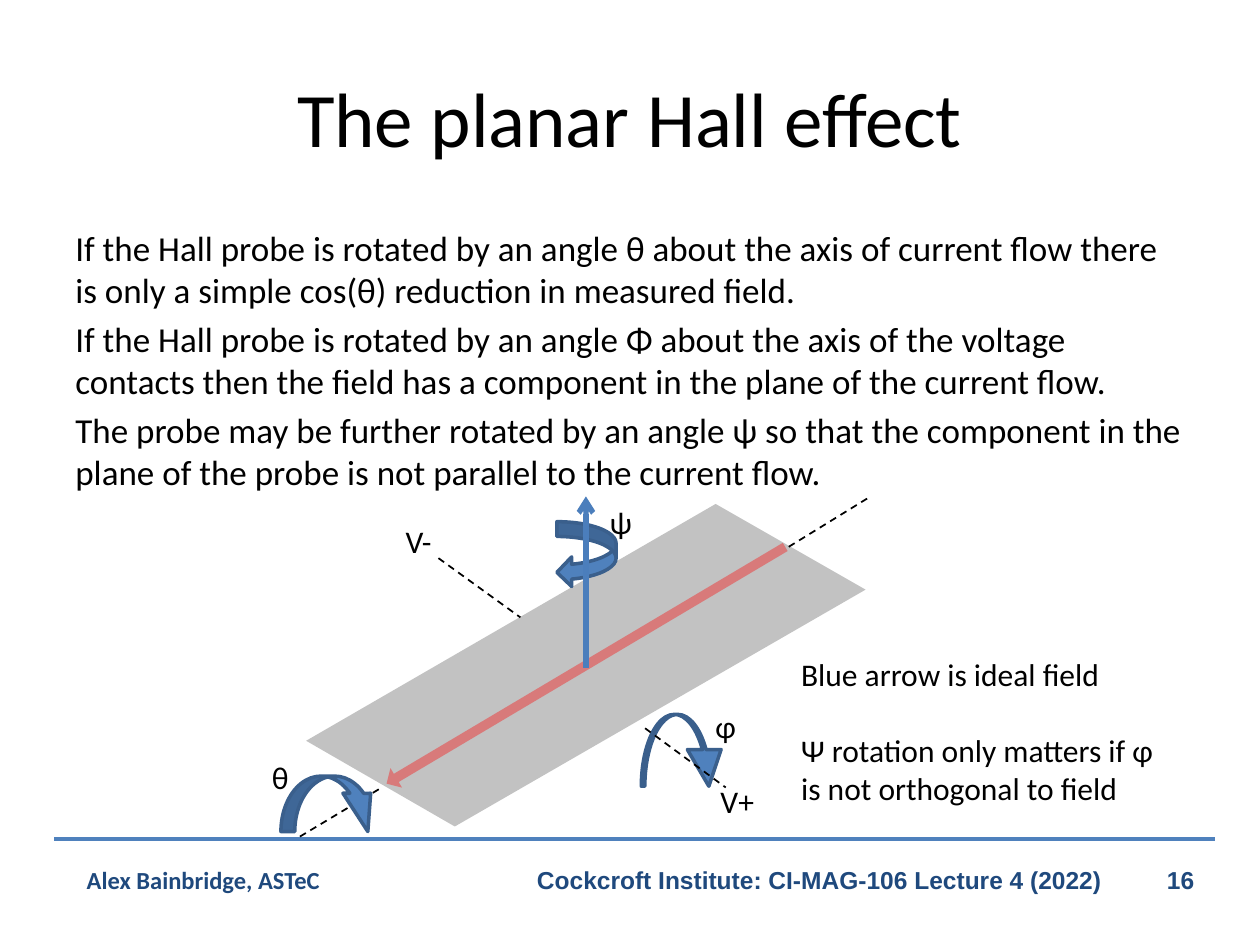
from pptx import Presentation
from pptx import util as u
from pptx.dml.color import RGBColor
from pptx.enum import dml, shapes, text
from pptx.oxml.ns import qn
from lxml import etree

BLUE, NAVY, BLACK = "4F81BD", "1F497D", "000000"


def color(hex_string):
    return RGBColor.from_string(hex_string)


def add_text(box, paragraphs, size=18, wrap=False, grow=True, align="LEFT",
             anchor="TOP", before=0, **font):
    """Add a text box; space before, in points, goes above every paragraph but the first."""
    tf = s.shapes.add_textbox(*map(u.Inches, box)).text_frame
    frame = {
        "word_wrap": wrap,
        "auto_size": text.MSO_AUTO_SIZE.SHAPE_TO_FIT_TEXT if grow else text.MSO_AUTO_SIZE.NONE,
        "vertical_anchor": text.MSO_ANCHOR[anchor],
    }
    for name, value in frame.items():
        setattr(tf, name, value)
    for i, line in enumerate(paragraphs):
        p = tf.add_paragraph() if i else tf.paragraphs[0]
        p.alignment = text.PP_ALIGN[align]
        p.space_before = u.Pt(before if i else 0)
        r = p.add_run()
        r.text = line
        style = {"name": "Calibri", "size": u.Pt(size), "bold": False, **font}
        hex_string = style.pop("hex_string", BLACK)
        for name, value in style.items():
            setattr(r.font, name, value)
        r.font.color.rgb = color(hex_string)
    return tf


def add_line(x1, y1, x2, y2, hex_string=BLACK, width=1, dashed=False):
    ends = map(u.Inches, (x1, y1, x2, y2))
    sp = s.shapes.add_connector(shapes.MSO_CONNECTOR.STRAIGHT, *ends)
    sp.line.color.rgb = color(hex_string)
    sp.line.width = u.Pt(width)
    if dashed:
        sp.line.dash_style = dml.MSO_LINE.DASH
    etree.SubElement(sp._element.spPr, qn("a:effectLst"))
    return sp


prs = Presentation()
prs.slide_width, prs.slide_height = u.Inches(10), u.Inches(7.5)
s = prs.slides.add_slide(prs.slide_layouts[6])

# Footer, with a tab stop for the slide number
footer = {"size": 14, "bold": True, "hex_string": NAVY, "wrap": True}
add_text((0.59, 6.82, 3.86, 0.34), ["Alex Bainbridge, ASTeC"], **footer)
add_line(0.43, 6.66, 9.64, 6.66, BLUE, 2)
tf = add_text((4.1, 6.82, 5.54, 0.34),
              ["Cockcroft Institute: CI-MAG-106 Lecture 4 (2022)\t16"],
              align="CENTER", name="Arial", **footer)
tabs = etree.SubElement(tf.paragraphs[0]._p.pPr, qn("a:tabLst"))
etree.SubElement(tabs, qn("a:tab"), pos=str(u.Inches(5)), algn="l")

# Title and body
add_text((0.5, 0.3, 9, 1.25), ["The planar Hall effect"], 44, wrap=True, grow=False,
         align="CENTER", anchor="MIDDLE")
add_text((0.5, 1.75, 9, 4.95), [
    "If the Hall probe is rotated by an angle θ about the axis of current flow there "
    "is only a simple cos(θ) reduction in measured field.",
    "If the Hall probe is rotated by an angle Φ about the axis of the voltage contacts "
    "then the field has a component in the plane of the current flow.",
    "The probe may be further rotated by an angle ψ so that the component in the plane "
    "of the probe is not parallel to the current flow.",
], 20, wrap=True, grow=False, before=4)

# Probe plane
corners = [(u.Inches(x), u.Inches(y))
           for x, y in [(5.68, 4), (6.87, 4.68), (3.61, 6.56), (2.43, 5.88)]]
fb = s.shapes.build_freeform(*corners[0])
fb.add_line_segments(corners[1:], close=True)
sp = fb.convert_to_shape()
sp.shadow.inherit = False
sp.fill.solid()
sp.fill.fore_color.rgb = color("C2C2C2")
sp.line.fill.background()

# Rotation axes
for ends in [(2.38, 6.64, 3.03, 6.25), (6.26, 4.34, 6.91, 3.94),
             (3.48, 4.43, 4.13, 4.9)]:
    add_line(*ends, dashed=True)

# Current flow
sp = s.shapes.add_shape(shapes.MSO_SHAPE.UP_ARROW,
                        *map(u.Inches, (4.56, 3.44, 0.18, 3.68)))
sp.rotation = 239.3
sp.adjustments[0], sp.adjustments[1] = 0.42, 0.5
sp.shadow.inherit = False
sp.fill.solid()
sp.fill.fore_color.rgb = color("FF0000")
red = sp._element.spPr.find(qn("a:solidFill"))[0]
etree.SubElement(red, qn("a:alpha"), val="37000")
sp.line.fill.background()

# Rotation arrows
for kind, box, adjustments in [
    ("CURVED_DOWN_ARROW", (2.23, 6.16, 0.8, 0.44), (0.25, 0.5, 0.69)),
    ("CURVED_DOWN_ARROW", (5.09, 5.67, 0.67, 0.57), (0.05, 0.47, 0.51)),
    ("CURVED_LEFT_ARROW", (4.42, 4.14, 0.47, 0.52), ()),
]:
    sp = s.shapes.add_shape(shapes.MSO_SHAPE[kind], *map(u.Inches, box))
    for i, value in enumerate(adjustments):
        sp.adjustments[i] = value
    sp.shadow.inherit = False
    sp.fill.solid()
    sp.fill.fore_color.rgb = color(BLUE)
    sp.line.color.rgb = color("3A5F8C")
    sp.line.width = u.Pt(2)
add_line(5.12, 5.78, 5.76, 6.25, dashed=True)

# Labels
for label, x, y, width in [("θ", 2.06, 5.97, 0.34), ("φ", 5.58, 5.56, 0.37),
                           ("ψ", 4.74, 3.94, 0.38), ("V+", 5.62, 6.16, 0.47),
                           ("V-", 3.12, 4.09, 0.42)]:
    add_text((x, y, width, 0.4), [label])

# Ideal field
sp = add_line(4.65, 5.3, 4.65, 3.94, "4B7EBC", 3)
etree.SubElement(sp._element.spPr.find(qn("a:ln")), qn("a:tailEnd"), type="arrow")
add_text((6.26, 5.15, 3.18, 1.31), [
    "Blue arrow is ideal field",
    "Ψ rotation only matters if φ is not orthogonal to field",
], wrap=True, before=22)

prs.save("out.pptx")
